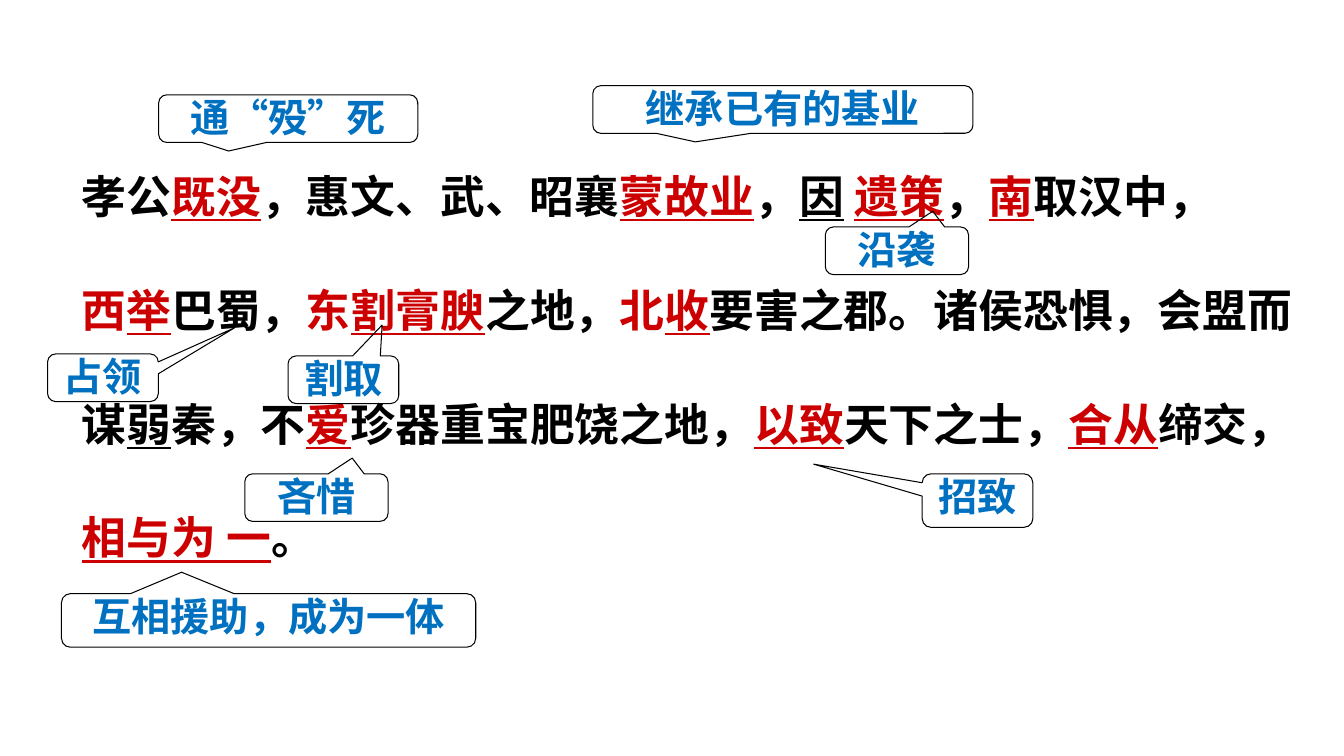
"""Build a slide of an annotated classical Chinese passage with callout glosses."""
import lxml.etree
import pptx
import pptx.dml.color
import pptx.enum.shapes
import pptx.enum.text
import pptx.oxml.ns
import pptx.util

Cm = pptx.util.Cm
Pt = pptx.util.Pt
FONT = "Noto Sans CJK SC"
BLACK, RED, BLUE = "000000", "CC0000", "0070C0"
PASSAGE_SIZE, GLOSS_SIZE = 32, 28

PLAIN = (BLACK, False)
LINED = (BLACK, True)
KEY = (RED, False)
KEY_LINED = (RED, True)

PASSAGE_BOX = (1.81, 3.18, 31.24, 11.61)
PASSAGE = [
    [("孝公", PLAIN), ("既没", KEY_LINED), ("，惠文、武、昭襄", PLAIN),
     ("蒙故业", KEY_LINED), ("，", PLAIN), ("因", LINED), (" ", PLAIN),
     ("遗策", KEY_LINED), ("，", PLAIN), ("南", KEY_LINED), ("取汉中，", PLAIN)],
    [("西", KEY), ("举", KEY_LINED), ("巴蜀，", PLAIN), ("东", KEY),
     ("割膏腴", KEY_LINED), ("之地，", PLAIN), ("北", KEY), ("收", KEY_LINED),
     ("要害之郡。诸侯恐惧，会盟而", PLAIN)],
    [("谋", PLAIN), ("弱", LINED), ("秦，不", PLAIN), ("爱", KEY_LINED),
     ("珍器重宝肥饶之地，", PLAIN), ("以致", KEY_LINED), ("天下之士，", PLAIN),
     ("合从", KEY_LINED), ("缔交，", PLAIN)],
    [("相与为 一", KEY_LINED), ("。", PLAIN)],
]

LOW, TALL = 1.2, 1.35
GLOSSES = [
    ("沿袭", (20.8, 5.72, 3.61, LOW), (0.25, -0.83)),
    ("互相援助，成为一体", (1.55, 14.96, 10.44, TALL), (-0.21, -0.9)),
    ("割取", (7.26, 8.97, 2.79, LOW), (0.35, -1.15)),
    ("招致", (23.24, 11.94, 2.79, TALL), (-1.48, -0.68)),
    ("占领", (1.2, 8.92, 2.79, LOW), (1.19, -1.05)),
    ("继承已有的基业", (14.94, 2.16, 9.58, LOW), (-0.23, 0.68)),
    ("通“殁”死", (4, 2.39, 6.53, LOW), (-0.23, 0.68)),
    ("吝惜", (6.17, 11.94, 3.61, LOW), (0.25, -0.83)),
]


def paint(target, color):
    target.rgb = pptx.dml.color.RGBColor.from_string(color)


def add_span(para, text, size, color, underlined=False):
    span = para.add_run()
    span.text = text
    span.font.size = Pt(size)
    span.font.bold = True
    span.font.underline = underlined
    span.font.name = FONT
    paint(span.font.color, color)
    properties = span.font._element
    lxml.etree.SubElement(properties, pptx.oxml.ns.qn("a:ea"), typeface=FONT)


def add_passage(page):
    box = page.shapes.add_textbox(*map(Cm, PASSAGE_BOX))
    frame = box.text_frame
    frame.word_wrap = True
    frame.auto_size = pptx.enum.text.MSO_AUTO_SIZE.SHAPE_TO_FIT_TEXT
    for index, spans in enumerate(PASSAGE):
        para = frame.add_paragraph() if index else frame.paragraphs[0]
        para.line_spacing = 1.7
        para.space_before = Pt(PASSAGE_SIZE / 2 if index else 0)
        for text, (color, underlined) in spans:
            add_span(para, text, PASSAGE_SIZE, color, underlined)


def add_gloss(page, text, place, tip):
    kind = pptx.enum.shapes.MSO_SHAPE.ROUNDED_RECTANGULAR_CALLOUT
    callout = page.shapes.add_shape(kind, *map(Cm, place))
    for index, value in enumerate(tip):
        callout.adjustments[index] = value
    callout.shadow.inherit = False
    callout.fill.background()
    paint(callout.line.color, BLACK)
    callout.line.width = Pt(0.75)
    frame = callout.text_frame
    frame.word_wrap = True
    frame.vertical_anchor = pptx.enum.text.MSO_ANCHOR.TOP
    para = frame.paragraphs[0]
    para.alignment = pptx.enum.text.PP_ALIGN.CENTER
    para.line_spacing = 0.8
    add_span(para, text, GLOSS_SIZE, BLUE)


def main():
    deck = pptx.Presentation()
    deck.slide_width, deck.slide_height = Cm(33.87), Cm(19.05)
    page = deck.slides.add_slide(deck.slide_layouts[6])
    add_passage(page)
    for gloss in GLOSSES:
        add_gloss(page, *gloss)
    deck.save("out.pptx")


if __name__ == "__main__":
    main()
